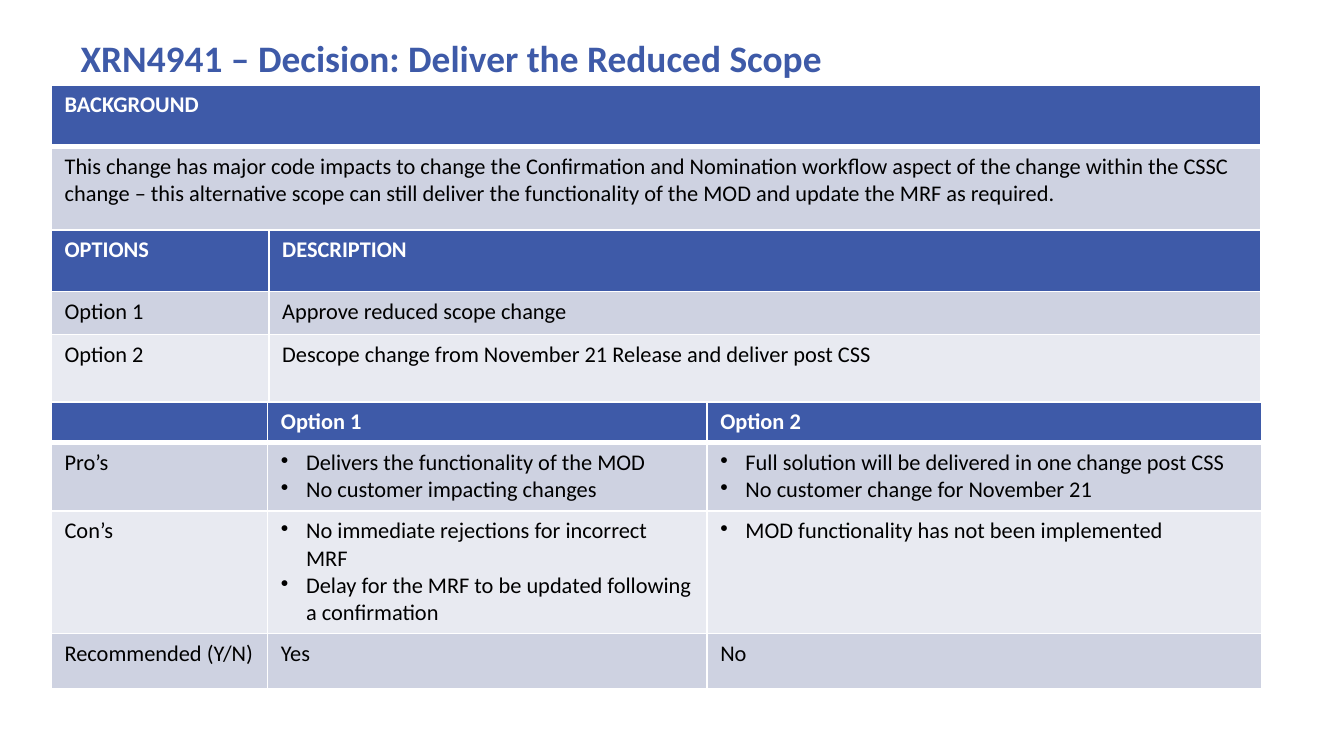
from dataclasses import dataclass

import lxml.etree
import pptx
import pptx.dml.color
import pptx.enum.text
import pptx.oxml.ns
import pptx.slide
import pptx.table
import pptx.text.text
import pptx.util

Pt = pptx.util.Pt
qn = pptx.oxml.ns.qn

COLOURS = {
    "brand": "3E5AA8",
    "band": "CED2E1",
    "pale": "E8EAF1",
    "white": "FFFFFF",
    "black": "000000",
}
HEADING = {"name": "Calibri", "size": Pt(12), "bold": True}
BODY = {**HEADING, "bold": False}
TITLE = {**HEADING, "size": Pt(20)}
BULLET_INDENT = Pt(13.5)


@dataclass
class Row:
    height: float
    fill: str
    cells: list[str | list[str]]

    @property
    def is_heading(self) -> bool:
        return self.fill == "brand"


@dataclass
class Grid:
    top: float
    columns: list[float]
    rows: list[Row]


LEFT = 27.4
DECISION = Grid(45.4, [116.6, 531.4], [
    Row(33.1, "brand", ["BACKGROUND"]),
    Row(44.6, "band", [
        "This change has major code impacts to change the Confirmation and "
        "Nomination workflow aspect of the change within the CSSC change – this "
        "alternative scope can still deliver the functionality of the MOD and "
        "update the MRF as required."]),
    Row(33.1, "brand", ["OPTIONS", "DESCRIPTION"]),
    Row(23, "band", ["Option 1", "Approve reduced scope change"]),
    Row(36.7, "pale", ["Option 2", "Descope change from November 21 Release and deliver post CSS"]),
])
COMPARISON = Grid(215.3, [115.9, 235.4, 297.4], [
    Row(21.8, "brand", ["", "Option 1", "Option 2"]),
    Row(36.5, "band", [
        "Pro’s",
        ["Delivers the functionality of the MOD", "No customer impacting changes"],
        ["Full solution will be delivered in one change post CSS",
         "No customer change for November 21"]]),
    Row(65.8, "pale", [
        "Con’s",
        ["No immediate rejections for incorrect MRF",
         "Delay for the MRF to be updated following a confirmation"],
        ["MOD functionality has not been implemented"]]),
    Row(29.5, "band", ["Recommended (Y/N)", "Yes", "No"]),
])


def rgb(colour: str) -> pptx.dml.color.RGBColor:
    return pptx.dml.color.RGBColor.from_string(COLOURS[colour])


def write(paragraph: pptx.text.text._Paragraph, text: str, style: dict, colour: str) -> None:
    if not text:
        end = lxml.etree.SubElement(paragraph._p, qn("a:endParaRPr"))
        end.set("sz", str(int(style["size"].pt * 100)))
        return
    run = paragraph.add_run()
    run.text = text
    for attribute, value in style.items():
        setattr(run.font, attribute, value)
    run.font.color.rgb = rgb(colour)


def add_bullet(paragraph: pptx.text.text._Paragraph) -> None:
    properties = paragraph._p.get_or_add_pPr()
    properties.set("marL", str(BULLET_INDENT))
    properties.set("indent", str(-BULLET_INDENT))
    lxml.etree.SubElement(properties, qn("a:buChar")).set("char", "•")


def add_borders(cell: pptx.table._Cell, widths: dict[str, float]) -> None:
    properties = cell._tc.get_or_add_tcPr()
    for side, width in widths.items():
        line = lxml.etree.SubElement(properties, qn(f"a:ln{side}"), w=str(Pt(width)))
        solid = lxml.etree.SubElement(line, qn("a:solidFill"))
        lxml.etree.SubElement(solid, qn("a:srgbClr"), val=COLOURS["white"])


def fill_cell(cell: pptx.table._Cell, content: str | list[str], row: Row) -> None:
    bulleted = isinstance(content, list)
    style, colour = (HEADING, "white") if row.is_heading else (BODY, "black")
    frame = cell.text_frame
    for index, text in enumerate(content if bulleted else [content]):
        paragraph = frame.add_paragraph() if index else frame.paragraphs[0]
        if bulleted:
            add_bullet(paragraph)
        write(paragraph, text, style, colour)


def draw_grid(slide: pptx.slide.Slide, grid: Grid) -> None:
    table = slide.shapes.add_table(
        len(grid.rows), len(grid.columns), Pt(LEFT), Pt(grid.top),
        Pt(sum(grid.columns)), Pt(sum(row.height for row in grid.rows))).table
    for column, width in zip(table.columns, grid.columns):
        column.width = Pt(width)
    for r, row in enumerate(grid.rows):
        table.rows[r].height = Pt(row.height)
        widths = {"L": 1, "R": 1, "T": 3 if r == 1 else 1, "B": 3 if r == 0 else 1}
        for c in range(len(grid.columns)):
            cell = table.cell(r, c)
            add_borders(cell, widths)
            cell.fill.solid()
            cell.fill.fore_color.rgb = rgb(row.fill)
        if len(row.cells) == 1:
            table.cell(r, 0).merge(table.cell(r, len(grid.columns) - 1))
        for c, content in enumerate(row.cells):
            fill_cell(table.cell(r, c), content, row)


def draw_title(slide: pptx.slide.Slide, text: str) -> None:
    title = slide.shapes.title
    placement = {"left": Pt(36), "top": Pt(15.1), "width": Pt(648), "height": Pt(50.4)}
    for attribute, value in placement.items():
        setattr(title, attribute, value)
    title.text_frame.vertical_anchor = pptx.enum.text.MSO_ANCHOR.TOP
    paragraph = title.text_frame.paragraphs[0]
    paragraph.alignment = pptx.enum.text.PP_ALIGN.LEFT
    write(paragraph, text, TITLE, "brand")


def main() -> None:
    deck = pptx.Presentation()
    deck.slide_width, deck.slide_height = Pt(720), Pt(405)
    slide = deck.slides.add_slide(deck.slide_layouts.get_by_name("Title Only"))
    draw_title(slide, "XRN4941 – Decision: Deliver the Reduced Scope")
    for grid in (DECISION, COMPARISON):
        draw_grid(slide, grid)
    deck.save("out.pptx")


if __name__ == "__main__":
    main()
